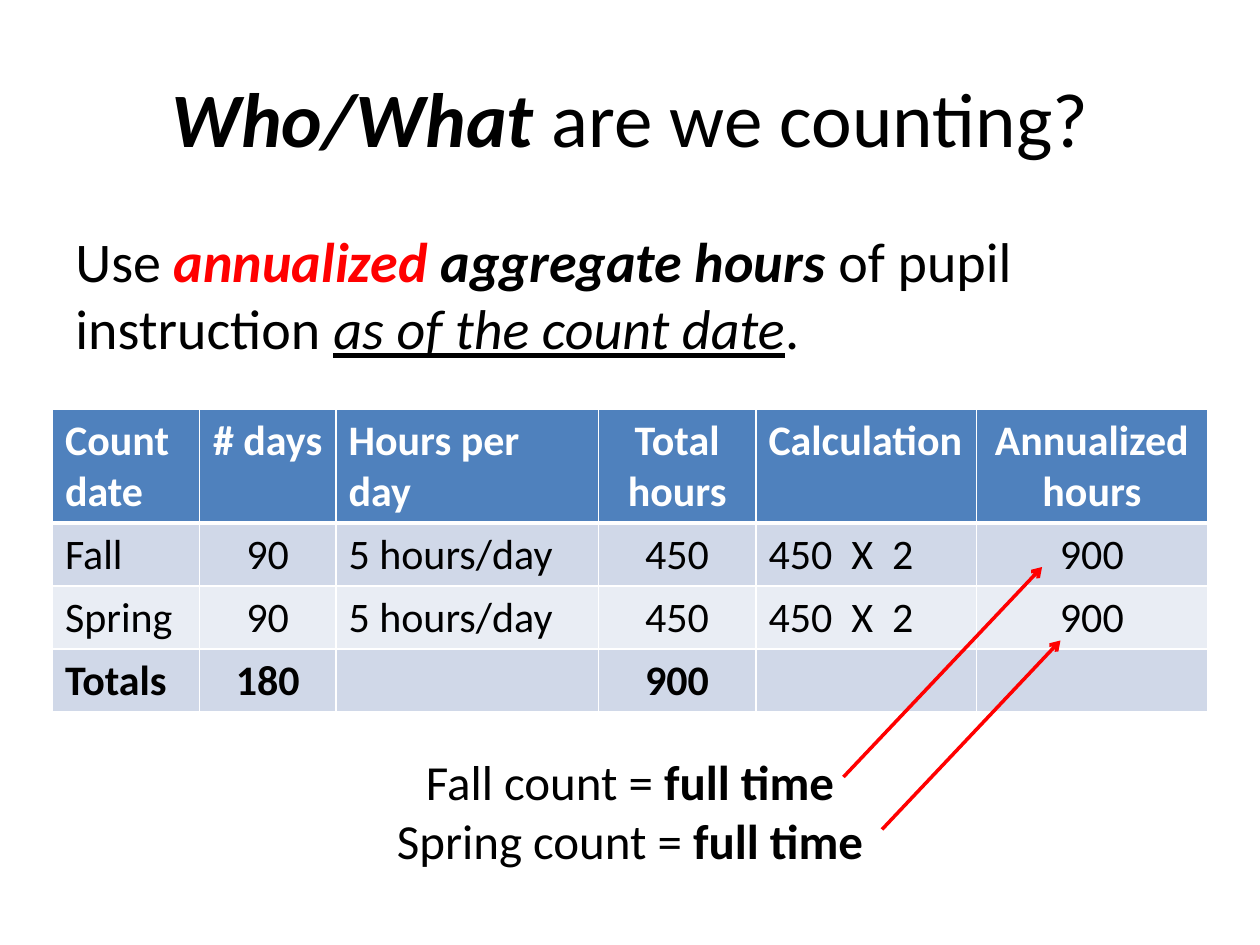
from lxml import etree
from pptx import Presentation
from pptx import util as u
from pptx.dml.color import RGBColor
from pptx.enum import shapes, text
from pptx.oxml import ns

Pt = u.Pt
LEFT, MID = text.PP_ALIGN.LEFT, text.PP_ALIGN.CENTER

THEME = {
    "font": "Calibri",
    "ink": "000000", "paper": "FFFFFF", "red": "FF0000",
    "head": "4F81BD", "bands": ("D0D8E8", "E9EDF4"),
    "title": 44, "body": 32, "table": 24, "note": 28,
}

TITLE = [("Who/What ", "bi"), ("are we counting?", "")]
BODY = [
    ("Use ", ""), ("annualized", "bir"), (" aggregate hours ", "bi"),
    ("of pupil instruction ", ""), ("as of the count date", "iu"), (".", ""),
]
NOTES = [
    [("Fall count = ", ""), ("full time", "b")],
    [("Spring count = ", ""), ("full time", "b")],
]
ROWS = [
    ("Count date", "# days", "Hours per day", "Total hours", "Calculation", "Annualized hours"),
    ("Fall", "90", "5 hours/day", "450", "450  X  2", "900"),
    ("Spring", "90", "5 hours/day", "450", "450  X  2", "900"),
    ("Totals", "180", "", "900", "", ""),
]
COLS = [(84, LEFT), (78, MID), (150, LEFT), (90, MID), (126, LEFT), (132, MID)]
HEIGHTS = [64.8, 36, 36, 36]
ARROWS = [(482, 444, 595.5, 324), (504, 474, 606, 366)]


def color(name):
    return RGBColor.from_string(THEME.get(name, name))


def style(para, size, ink="ink", align=LEFT):
    para.alignment = align
    para.font.name = THEME["font"]
    para.font.size = Pt(THEME[size])
    para.font.color.rgb = color(ink)


def write(para, runs, size, align=LEFT):
    style(para, size, align=align)
    for words, marks in runs:
        run = para.add_run()
        run.text = words
        font = run.font
        font.bold, font.italic = "b" in marks, "i" in marks
        if "u" in marks:
            font.underline = True
        if "r" in marks:
            font.color.rgb = color("red")


def place(shape, left, top, width, height):
    shape.left, shape.top = Pt(left), Pt(top)
    shape.width, shape.height = Pt(width), Pt(height)


def add_box(slide, left, top, width, height):
    box = slide.shapes.add_textbox(Pt(left), Pt(top), Pt(width), Pt(height))
    box.text_frame.word_wrap = True
    return box.text_frame


def edge(cell, side, width):
    props = cell._tc.get_or_add_tcPr()
    line = etree.SubElement(props, ns.qn("a:ln" + side), w=str(Pt(width)))
    fill = etree.SubElement(line, ns.qn("a:solidFill"))
    etree.SubElement(fill, ns.qn("a:srgbClr"), val=THEME["paper"])


def add_table(slide, left, top):
    width = sum(w for w, _ in COLS)
    table = slide.shapes.add_table(
        len(ROWS), len(COLS), Pt(left), Pt(top), Pt(width), Pt(sum(HEIGHTS))).table
    for col, (width, _) in zip(table.columns, COLS):
        col.width = Pt(width)
    for i, row in enumerate(ROWS):
        table.rows[i].height = Pt(HEIGHTS[i])
        for j, words in enumerate(row):
            cell = table.cell(i, j)
            cell.text = words
            para = cell.text_frame.paragraphs[0]
            style(para, "table", "ink" if i else "paper", COLS[j][1])
            para.font.bold = i in (0, len(ROWS) - 1)
            for side in "LRTB":
                thick = (i, side) in ((0, "B"), (1, "T"))
                edge(cell, side, 3 if thick else 1)
            cell.fill.solid()
            cell.fill.fore_color.rgb = color(THEME["bands"][(i - 1) % 2] if i else "head")


def add_arrow(slide, ends):
    line = slide.shapes.add_connector(
        shapes.MSO_CONNECTOR.STRAIGHT, *(Pt(v) for v in ends))
    line.line.color.rgb = color("red")
    line.line.width = Pt(2)
    etree.SubElement(line.line._get_or_add_ln(), ns.qn("a:tailEnd"), type="arrow")
    etree.SubElement(line._element.spPr, ns.qn("a:effectLst"))


def main():
    deck = Presentation()
    deck.slide_width, deck.slide_height = Pt(720), Pt(540)
    slide = deck.slides.add_slide(deck.slide_layouts[5])

    title = slide.shapes.title
    place(title, 36, 21.6, 648, 90)
    title.text_frame.vertical_anchor = text.MSO_ANCHOR.MIDDLE
    write(title.text_frame.paragraphs[0], TITLE, "title", MID)

    body = add_box(slide, 36, 126, 648, 90).paragraphs[0]
    body.space_before = Pt(6.4)
    write(body, BODY, "body")

    add_table(slide, 30, 234)

    notes = add_box(slide, 198, 426, 324, 75)
    for i, runs in enumerate(NOTES):
        para = notes.add_paragraph() if i else notes.paragraphs[0]
        write(para, runs, "note", MID)

    for ends in ARROWS:
        add_arrow(slide, ends)
    deck.save("out.pptx")


if __name__ == "__main__":
    main()
